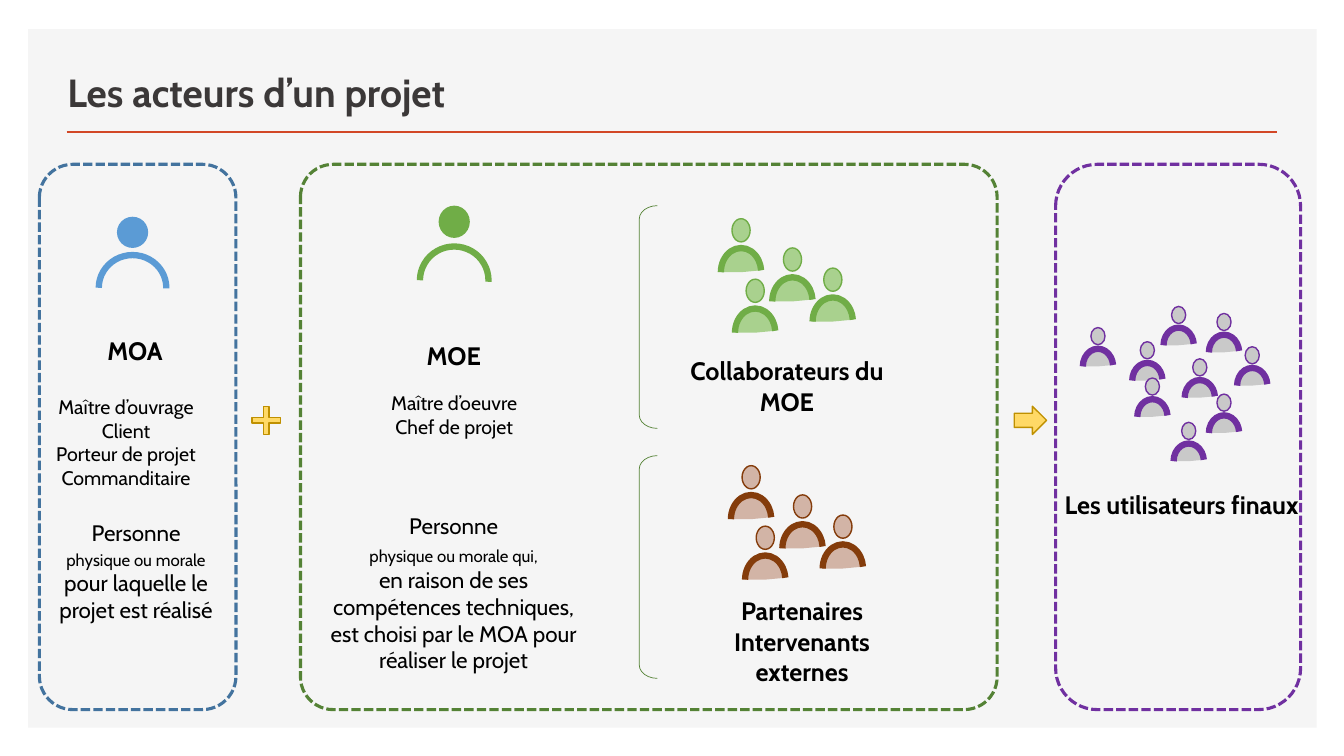
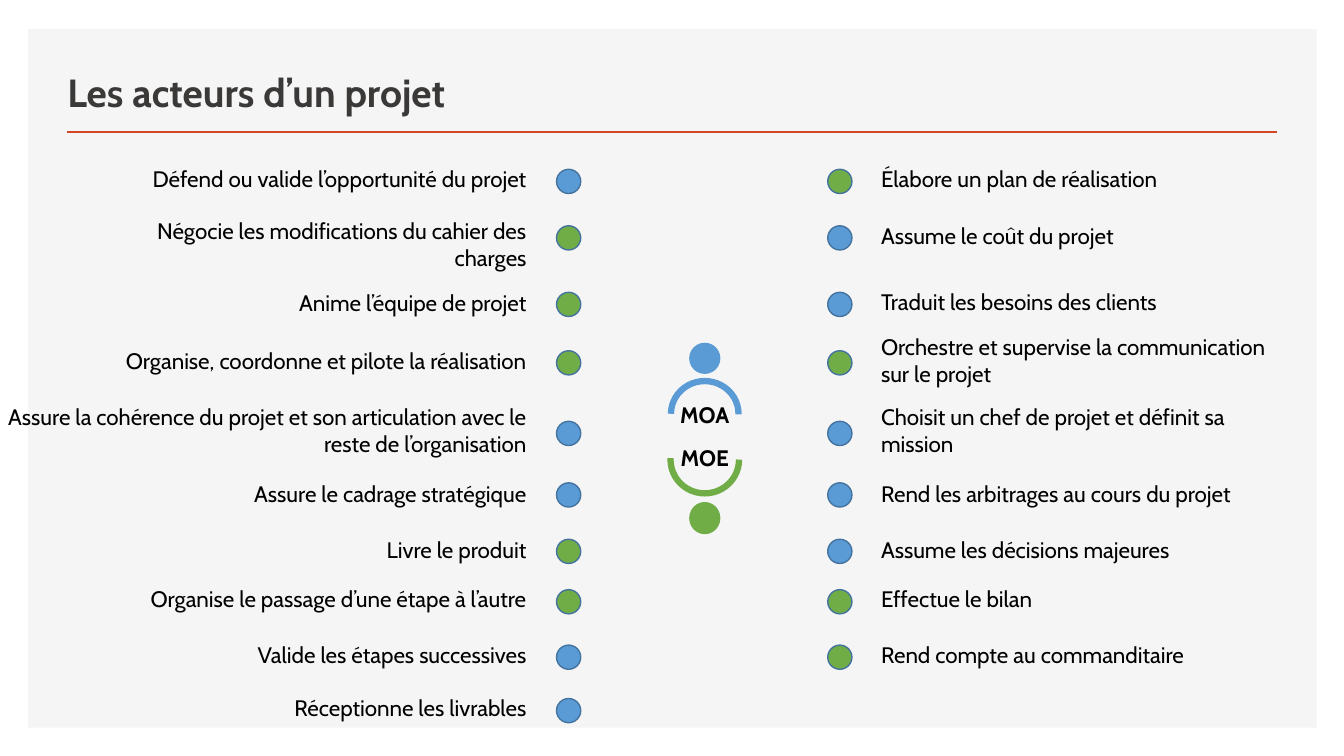
from collections import namedtuple

from lxml.etree import SubElement
from pptx import Presentation
from pptx.dml.color import RGBColor
from pptx.enum.dml import MSO_LINE
from pptx.enum.shapes import MSO_CONNECTOR, MSO_SHAPE
from pptx.enum.text import MSO_ANCHOR, PP_ALIGN
from pptx.oxml.ns import qn
from pptx.util import Inches, Pt

# The slide is a grid of square cells, 133.3 columns by 75 rows.
CELL = Inches(0.1)
COLUMNS, ROWS = 133.3, 75

FONT = "Cabin"
WHITE = RGBColor(0xFF, 0xFF, 0xFF)
BLACK = RGBColor(0x00, 0x00, 0x00)
PANEL_GREY = RGBColor(0xF5, 0xF5, 0xF5)
TITLE_GREY = RGBColor(0x3B, 0x38, 0x38)
RULE_ORANGE = RGBColor(0xD2, 0x47, 0x26)
BLUE = RGBColor(0x5B, 0x9B, 0xD5)
DARK_BLUE = RGBColor(0x43, 0x73, 0x9E)
GREEN = RGBColor(0x70, 0xAD, 0x47)
LIGHT_GREEN = RGBColor(0xA9, 0xD1, 0x8E)
DARK_GREEN = RGBColor(0x54, 0x82, 0x35)
BROWN = RGBColor(0x84, 0x3C, 0x0B)
LIGHT_BROWN = RGBColor(0xD2, 0xB4, 0xA6)
PURPLE = RGBColor(0x70, 0x30, 0xA0)
LIGHT_GREY = RGBColor(0xC9, 0xC9, 0xC9)
YELLOW = RGBColor(0xFF, 0xD9, 0x66)
DARK_YELLOW = RGBColor(0xBF, 0x90, 0x00)


def add_figure(page, kind, area, fill=None, line=None, weight=1.0, adjustments=()):
    """Add a preset shape; area is left, top, width, height in grid cells."""
    figure = page.shapes.add_shape(kind, *(round(cells * CELL) for cells in area))
    figure.shadow.inherit = False
    for index, value in enumerate(adjustments):
        figure.adjustments[index] = value
    if fill is None:
        figure.fill.background()
    else:
        figure.fill.solid()
        figure.fill.fore_color.rgb = fill
    if line is None:
        figure.line.fill.background()
    else:
        figure.line.color.rgb = line
        figure.line.width = Pt(weight)
    return figure


def add_text(page, area, lines, align=PP_ALIGN.CENTER, bold=False, color=BLACK):
    """Add a text box; each line is text, size and optional space before."""
    box = page.shapes.add_textbox(*(round(cells * CELL) for cells in area))
    frame = box.text_frame
    frame.word_wrap = True
    for index, (text, size, *space) in enumerate(lines):
        para = frame.add_paragraph() if index else frame.paragraphs[0]
        para.text = text
        para.alignment = align
        if space:
            para.space_before = Pt(space[0])
        for span in para.runs:
            span.font.name = FONT
            span.font.size = Pt(size)
            span.font.bold = bold
            span.font.color.rgb = color
    return box


deck = Presentation()
deck.slide_width = round(COLUMNS * CELL)
deck.slide_height = ROWS * CELL
blank = deck.slide_layouts[6]

# Shared frame: grey panel, title and orange rule
pages = [deck.slides.add_slide(blank) for _ in range(2)]
for page in pages:
    page.background.fill.solid()
    page.background.fill.fore_color.rgb = WHITE
    add_figure(page, MSO_SHAPE.RECTANGLE, (2.8, 2.9, 127.8, 69.3), PANEL_GREY)
    rule = page.shapes.add_connector(
        MSO_CONNECTOR.STRAIGHT,
        *(round(cells * CELL) for cells in (6.6, 13.1, 126.7, 13.1)))
    rule.line.color.rgb = RULE_ORANGE
    rule.line.width = Pt(2)
    SubElement(rule._element.spPr, qn("a:effectLst"))
    title = add_text(page, (5.7, 4.9, 75.2, 7), [("Les acteurs d’un projet", 28)],
                     PP_ALIGN.LEFT, True, TITLE_GREY)
    title.text_frame.vertical_anchor = MSO_ANCHOR.BOTTOM
actors_page, roles_page = pages

# People: a round head above (or, upside down, below) an arc for the shoulders
Build = namedtuple("Build", "head_width head_height body_width body_height drop sweep")
MOA_BUILD = Build(3.1, 3.1, 6.5, 6.7, 3.7, 54.56)
MOE_BUILD = Build(3.1, 3.2, 6.7, 6.8, 4, 55.52)
TEAM_BUILD = Build(1.8, 2.3, 4.8, 4, 3.3, 50.74)
USER_BUILD = Build(1.4, 1.7, 3.5, 3, 2.35, 50.74)

TEAM_STEPS = [(0, 0), (5.1, 2.9), (9.1, 4.9), (1.4, 6)]
USERS = [(108.9, 32.5), (116.9, 30.4), (113.8, 33.9), (114.3, 37.5), (119, 35.6),
         (121.4, 31.1), (124.2, 34.4), (121.4, 39.1), (117.9, 41.9)]

# page, build, centre, head's outer edge, fill, outline, upside down
people = [
    (actors_page, MOA_BUILD, 13.15, 21.5, None, BLUE, False),
    (actors_page, MOE_BUILD, 45.05, 20.4, None, GREEN, False),
    (roles_page, MOA_BUILD, 69.9, 34, None, BLUE, False),
    (roles_page, MOE_BUILD, 69.9, 53, None, GREEN, True),
]
for left, top, fill, line in [(73.5, 21.7, LIGHT_GREEN, GREEN),
                              (74.5, 46.2, LIGHT_BROWN, BROWN)]:
    people += [(actors_page, TEAM_BUILD, left + right, top + down, fill, line, False)
               for right, down in TEAM_STEPS]
people += [(actors_page, USER_BUILD, center, top, LIGHT_GREY, PURPLE, False)
           for center, top in USERS]

for page, build, center, edge, fill, line, upside_down in people:
    head_top, body_top = edge, edge + build.drop
    if upside_down:
        head_top = edge - build.head_height
        body_top = edge - build.drop - build.body_height
    add_figure(page, MSO_SHAPE.OVAL,
               (center - build.head_width / 2, head_top,
                build.head_width, build.head_height),
               fill or line, line if fill else None)
    body = add_figure(page, MSO_SHAPE.ARC,
                      (center - build.body_width / 2, body_top,
                       build.body_width, build.body_height),
                      fill, line, 4.5, (162, build.sweep))
    body.rotation = 90 if upside_down else 270

# Slide 1: the three groups of actors
for left, width, corner, color in [(3.9, 19.5, 0.17, DARK_BLUE),
                                   (29.8, 69.1, 0.06, DARK_GREEN),
                                   (104.7, 24.3, 0.17, PURPLE)]:
    group_outline = add_figure(actors_page, MSO_SHAPE.ROUNDED_RECTANGLE,
                               (left, 16.3, width, 54.1), None, color, 2.25, (corner,))
    group_outline.line.dash_style = MSO_LINE.SQUARE_DOT

for top in (20.4, 45.2):
    add_figure(actors_page, MSO_SHAPE.LEFT_BRACKET, (63.4, top, 1.8, 22.1),
               None, DARK_GREEN, 0.5, (0.74,))
add_figure(actors_page, MSO_SHAPE.CROSS, (25, 40.3, 2.8, 2.8),
           YELLOW, DARK_YELLOW, 1, (0.4,))
add_figure(actors_page, MSO_SHAPE.RIGHT_ARROW, (100.6, 40.3, 3.2, 2.8),
           YELLOW, DARK_YELLOW)

for area, name in [((4.1, 32.8, 18.6, 4), "MOA"),
                   ((36.7, 33.3, 16.6, 4), "MOE"),
                   ((67.2, 34.8, 21.7, 7.1), "Collaborateurs du MOE"),
                   ((68.7, 58.6, 21.7, 10.1), "Partenaires Intervenants externes"),
                   ((103.8, 48, 26.8, 7.1), "Les utilisateurs finaux")]:
    add_text(actors_page, area, [(name, 18)], bold=True)

add_text(actors_page, (2.9, 38.7, 19.2, 10.4),
         [("Maître d’ouvrage", 14), ("Client", 14),
          ("Porteur de projet", 14), ("Commanditaire", 14)])
add_text(actors_page, (34.6, 38.3, 20.9, 5.7),
         [("Maître d’oeuvre", 14), ("Chef de projet", 14)])
add_text(actors_page, (4.1, 51, 18.8, 11.4),
         [("Personne", 16), ("physique ou morale", 12, 2.5),
          ("pour laquelle le projet est réalisé", 16)])
add_text(actors_page, (31, 50.3, 28, 17.2),
         [("Personne", 16), ("physique ou morale qui,", 12, 5),
          ("en raison de ses compétences techniques, "
           "est choisi par le MOA pour réaliser le projet", 16)])

# Slide 2: the roles, each with a dot in the colour of its actor
for top, name in [(39.3, "MOA"), (43.6, "MOE")]:
    add_text(roles_page, (61.6, top, 16.6, 3.7), [(name, 16)], bold=True)

DOT_ROWS = [16.8, 22.4, 29, 34.8, 41.8, 47.9, 53.5, 58.5, 64, 69.3]
# text top, actor's colour, role
LEFT_ROLES = [
    (15.9, BLUE, "Défend ou valide l’opportunité du projet"),
    (21.1, GREEN, "Négocie les modifications du cahier des\vcharges"),
    (28.2, GREEN, "Anime l’équipe de projet"),
    (33.9, GREEN, "Organise, coordonne et pilote la réalisation"),
    (39.5, BLUE, "Assure la cohérence du projet et son articulation avec le "
                 "reste de l’organisation"),
    (47.1, BLUE, "Assure le cadrage stratégique"),
    (52.7, GREEN, "Livre le produit"),
    (57.6, GREEN, "Organise le passage d’une étape à l’autre"),
    (63.1, BLUE, "Valide les étapes successives"),
    (68.4, BLUE, "Réceptionne les livrables"),
]
RIGHT_ROLES = [
    (15.9, GREEN, "Élabore un plan de réalisation"),
    (21.5, BLUE, "Assume le coût du projet"),
    (28.1, BLUE, "Traduit les besoins des clients"),
    (32.6, GREEN, "Orchestre et supervise la communication sur le projet"),
    (39.5, BLUE, "Choisit un chef de projet et définit sa mission"),
    (47.1, BLUE, "Rend les arbitrages au cours du projet"),
    (52.7, BLUE, "Assume les décisions majeures"),
    (57.6, GREEN, "Effectue le bilan"),
    (63.1, GREEN, "Rend compte au commanditaire"),
]
for roles, dot_left, text_left, text_width, align in [
        (LEFT_ROLES, 55.2, -0.3, 53.5, PP_ALIGN.RIGHT),
        (RIGHT_ROLES, 82.1, 86.4, 41, PP_ALIGN.LEFT)]:
    for dot_top, (text_top, color, role) in zip(DOT_ROWS, roles):
        add_figure(roles_page, MSO_SHAPE.OVAL, (dot_left, dot_top, 2.4, 2.4),
                   color, DARK_BLUE)
        add_text(roles_page, (text_left, text_top, text_width, 3.7),
                 [(role, 16)], align)

deck.save("out.pptx")
